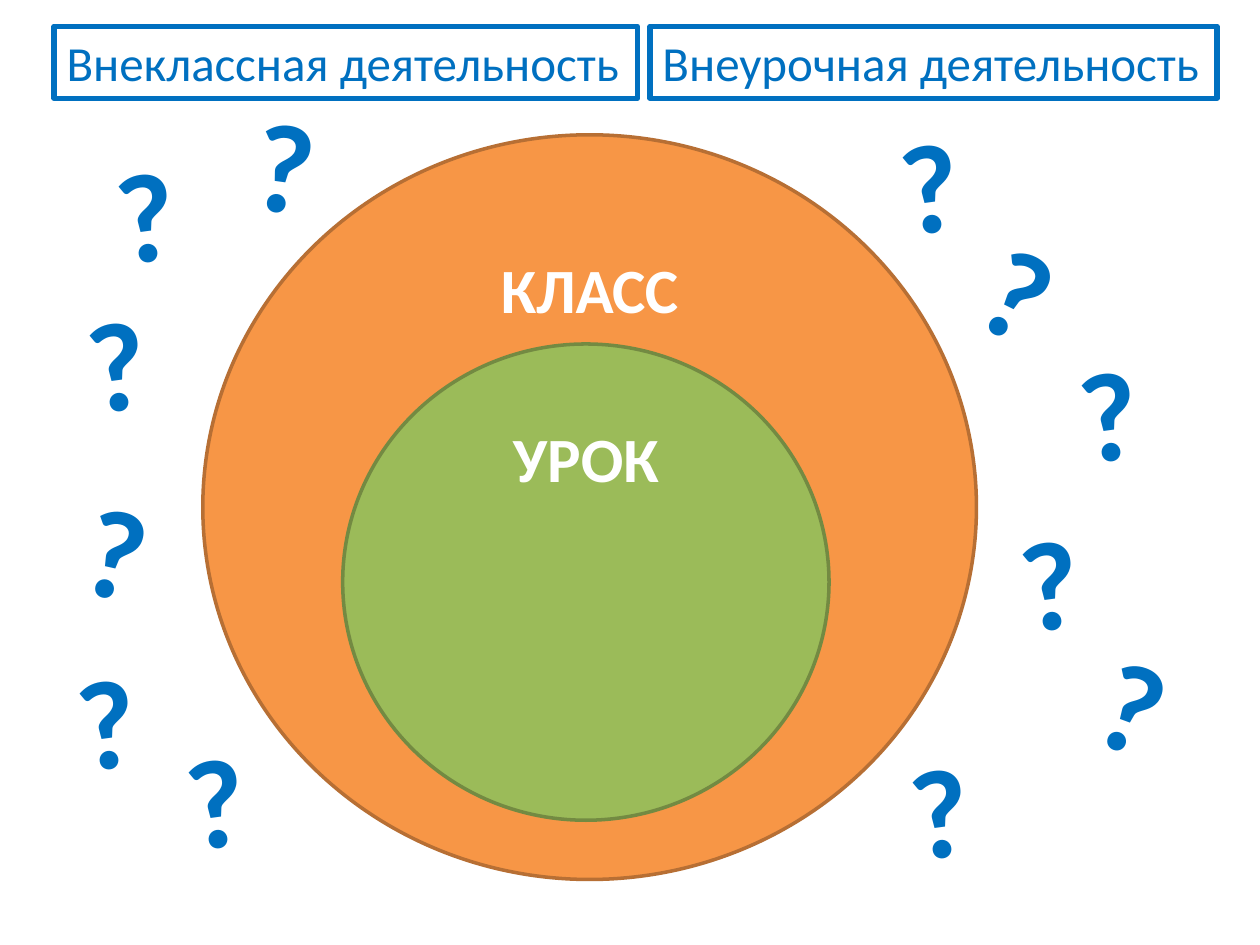
from pptx import Presentation
from pptx.dml.color import RGBColor
from pptx.enum.shapes import MSO_SHAPE
from pptx.enum.text import MSO_ANCHOR, MSO_AUTO_SIZE, PP_ALIGN
from pptx.util import Inches, Pt

OVAL = MSO_SHAPE.OVAL
TOP = MSO_ANCHOR.TOP
GROW = MSO_AUTO_SIZE.SHAPE_TO_FIT_TEXT
CENTER = PP_ALIGN.CENTER
LEFT = PP_ALIGN.LEFT

BLUE = RGBColor(0x00, 0x70, 0xC0)
WHITE = RGBColor(0xFF, 0xFF, 0xFF)
ORANGE = RGBColor(0xF7, 0x96, 0x46)
DARK_ORANGE = RGBColor(0xB7, 0x6F, 0x34)
GREEN = RGBColor(0x9B, 0xBB, 0x59)
DARK_GREEN = RGBColor(0x73, 0x8A, 0x42)

TILT = -7.7  # the usual lean of a question mark

# Left, top, rotation
QUESTION_MARKS = [
    (0.83, 1.03, TILT), (1.93, 0.64, 7.9), (0.6, 2.21, TILT),
    (0.6, 3.71, 12.7), (1.38, 5.68, TILT), (7.05, 0.8, TILT),
    (7.76, 1.66, 26.4), (8.47, 2.61, TILT), (8, 3.95, TILT),
    (8.67, 4.93, 20.1), (7.13, 5.76, TILT), (0.52, 5.05, TILT),
]


class SlideBuilder:
    """Holds the style and the current slide."""

    font_name = "Calibri"

    def __init__(self, slide):
        self.slide = slide

    def set_text(self, shape, text, size, color, bold=False, align=LEFT):
        para = shape.text_frame.paragraphs[0]
        para.text = text
        para.alignment = align
        para.font.name = self.font_name
        para.font.size = Pt(size)
        para.font.bold = bold
        para.font.color.rgb = color

    def circle(self, text, left, top, width, height, fill, outline):
        shape = self.slide.shapes.add_shape(
            OVAL, Inches(left), Inches(top), Inches(width), Inches(height))
        shape.shadow.inherit = False
        shape.fill.solid()
        shape.fill.fore_color.rgb = fill
        shape.line.color.rgb = outline
        shape.line.width = Pt(2)
        shape.text_frame.vertical_anchor = TOP
        self.set_text(shape, text, 36, WHITE, bold=True, align=CENTER)

    def text_box(self, text, left, top, width, height, size, bold=False):
        box = self.slide.shapes.add_textbox(
            Inches(left), Inches(top), Inches(width), Inches(height))
        box.text_frame.word_wrap = False
        box.text_frame.auto_size = GROW
        self.set_text(box, text, size, BLUE, bold)
        return box

    def heading(self, text, left, width):
        box = self.text_box(text, left, 0.21, width, 0.57, 28)
        box.line.color.rgb = BLUE
        box.line.width = Pt(3)

    def question_mark(self, left, top, rotation):
        box = self.text_box("?", left, top, 0.67, 1.31, 72, bold=True)
        box.rotation = rotation


def main():
    deck = Presentation()
    deck.slide_width = Inches(10)
    deck.slide_height = Inches(7.5)
    page = SlideBuilder(deck.slides.add_slide(deck.slide_layouts[6]))

    # Nested circles
    page.circle("КЛАСС", 1.61, 1.07, 6.14, 5.91, ORANGE, DARK_ORANGE)
    page.circle("УРОК", 2.72, 2.73, 3.86, 3.78, GREEN, DARK_GREEN)

    # Framed headings
    page.heading("Внеклассная деятельность", 0.43, 4.63)
    page.heading("Внеурочная деятельность", 5.16, 4.5)

    # Question marks around the circles
    for left, top, rotation in QUESTION_MARKS:
        page.question_mark(left, top, rotation)

    deck.save("out.pptx")


if __name__ == "__main__":
    main()
